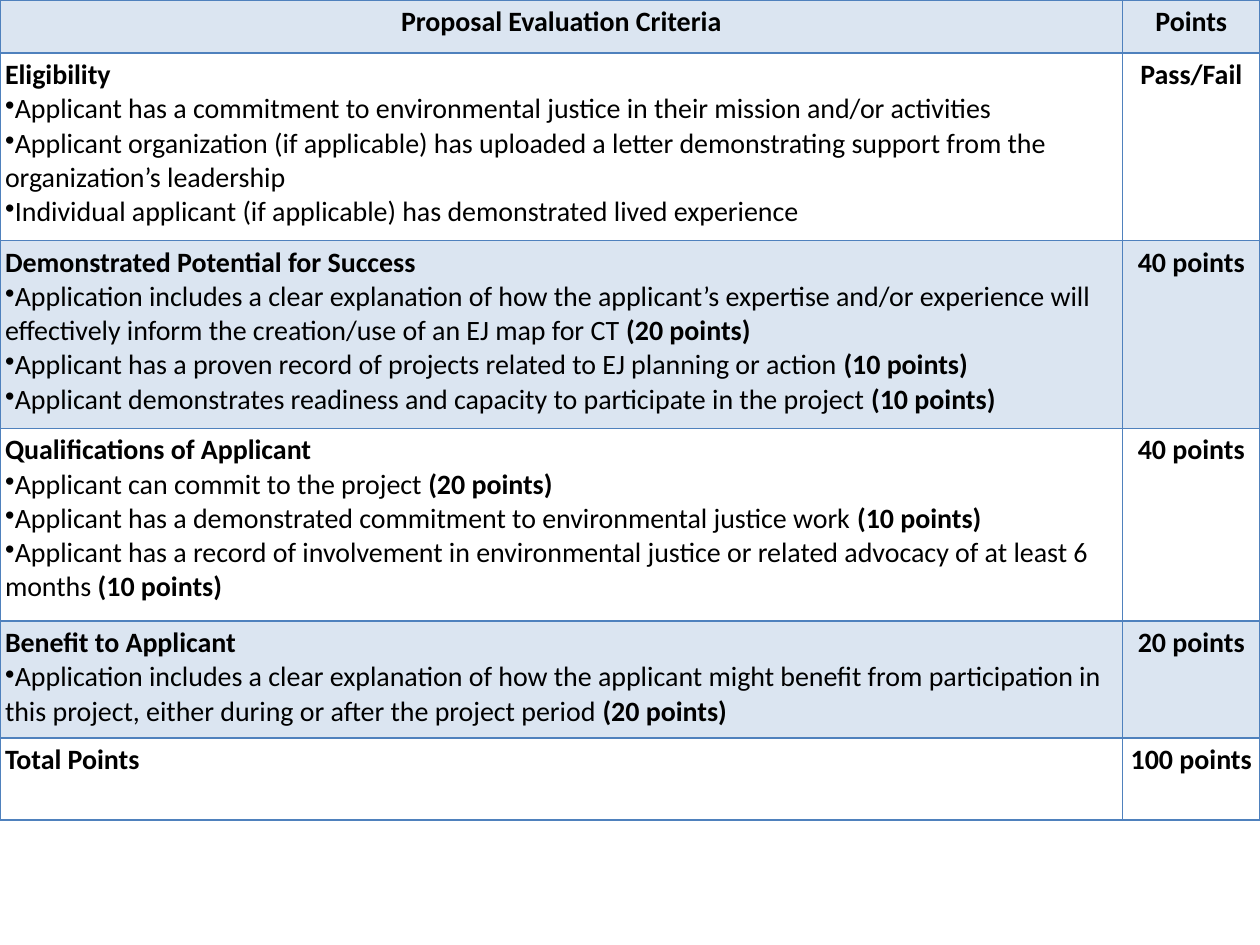
from dataclasses import dataclass

from lxml.etree import SubElement
from pptx import Presentation
from pptx.dml.color import RGBColor
from pptx.enum.text import PP_ALIGN
from pptx.oxml import parse_xml
from pptx.oxml.ns import nsdecls, qn
from pptx.util import Inches, Pt


@dataclass(frozen=True)
class Theme:
    font: str = "Calibri"
    size: int = 16
    text: str = "000000"
    accent: str = "4F81BD"
    band_opacity: int = 20
    border: int = 1
    margin: float = 0.04


THEME = Theme()
SLIDE_WIDTH, SLIDE_HEIGHT = 10, 7.5
COLUMN_SHARES = (0.891, 0.109)
HEADER = ("Proposal Evaluation Criteria", "Points")

# Row height, heading, points, and bullets as (text, bold score)
CRITERIA = [
    (1.49, "Eligibility", "Pass/Fail", [
        ("Applicant has a commitment to environmental justice in their mission and/or activities", ""),
        ("Applicant organization (if applicable) has uploaded a letter demonstrating support "
         "from the organization’s leadership", ""),
        ("Individual applicant (if applicable) has demonstrated lived experience", ""),
    ]),
    (1.49, "Demonstrated Potential for Success", "40 points", [
        ("Application includes a clear explanation of how the applicant’s expertise and/or "
         "experience will effectively inform the creation/use of an EJ map for CT ", "(20 points)"),
        ("Applicant has a proven record of projects related to EJ planning or action ", "(10 points)"),
        ("Applicant demonstrates readiness and capacity to participate in the project ", "(10 points)"),
    ]),
    (1.53, "Qualifications of Applicant ", "40 points", [
        ("Applicant can commit to the project ", "(20 points)"),
        ("Applicant has a demonstrated commitment to environmental justice work ", "(10 points)"),
        ("Applicant has a record of involvement in environmental justice or related advocacy "
         "of at least 6 months ", "(10 points)"),
    ]),
    (0.93, "Benefit to Applicant", "20 points", [
        ("Application includes a clear explanation of how the applicant might benefit from "
         "participation in this project, either during or after the project period ", "(20 points)"),
    ]),
    (0.65, "Total Points ", "100 points", []),
]
HEADER_HEIGHT = 0.42


def add_span(para, text, bold=True):
    span = para.add_run()
    span.text = text
    span.font.name = THEME.font
    span.font.size = Pt(THEME.size)
    span.font.bold = bold
    span.font.color.rgb = RGBColor.from_string(THEME.text)


def add_bullet(cell, text, score):
    para = cell.text_frame.add_paragraph()
    properties = para._p.get_or_add_pPr()
    properties.set("marL", "0")
    properties.set("indent", "0")
    SubElement(properties, qn("a:buChar")).set("char", "•")
    add_span(para, text, bold=False)
    if score:
        add_span(para, score)


def style_cell(cell, banded):
    """Set margins, a tinted or empty fill, and a border on all four sides."""
    cell.margin_left = cell.margin_right = Inches(THEME.margin)
    cell.margin_top = cell.margin_bottom = Inches(THEME.margin)
    properties = cell._tc.get_or_add_tcPr()
    if banded:
        cell.fill.solid()
        cell.fill.fore_color.rgb = RGBColor.from_string(THEME.accent)
        color = properties.find(qn("a:solidFill")).find(qn("a:srgbClr"))
        SubElement(color, qn("a:alpha")).set("val", str(THEME.band_opacity * 1000))
    else:
        cell.fill.background()
    for index, side in enumerate(("lnL", "lnR", "lnT", "lnB")):
        properties.insert(index, parse_xml(
            f'<a:{side} {nsdecls("a")} w="{Pt(THEME.border)}"><a:solidFill>'
            f'<a:srgbClr val="{THEME.accent}"/></a:solidFill></a:{side}>'))


def fill_cell(cell, heading, bullets=(), align=PP_ALIGN.LEFT, banded=False):
    style_cell(cell, banded)
    para = cell.text_frame.paragraphs[0]
    para.alignment = align
    add_span(para, heading)
    for text, score in bullets:
        add_bullet(cell, text, score)


def add_criteria_table(page, left, top, width):
    heights = [HEADER_HEIGHT] + [row[0] for row in CRITERIA]
    table = page.shapes.add_table(
        len(heights), len(COLUMN_SHARES),
        Inches(left), Inches(top), Inches(width), Inches(sum(heights))).table
    table.first_row = table.horz_banding = False
    for column, share in zip(table.columns, COLUMN_SHARES):
        column.width = Inches(width * share)
    for row, height in zip(table.rows, heights):
        row.height = Inches(height)
    for index, title in enumerate(HEADER):
        fill_cell(table.cell(0, index), title, align=PP_ALIGN.CENTER, banded=True)
    for index, (_, heading, points, bullets) in enumerate(CRITERIA, start=1):
        banded = index % 2 == 0
        fill_cell(table.cell(index, 0), heading, bullets, banded=banded)
        fill_cell(table.cell(index, 1), points, align=PP_ALIGN.CENTER, banded=banded)


def main():
    deck = Presentation()
    deck.slide_width, deck.slide_height = Inches(SLIDE_WIDTH), Inches(SLIDE_HEIGHT)
    page = deck.slides.add_slide(deck.slide_layouts[6])
    add_criteria_table(page, left=0, top=0, width=SLIDE_WIDTH)
    deck.save("out.pptx")


if __name__ == "__main__":
    main()
